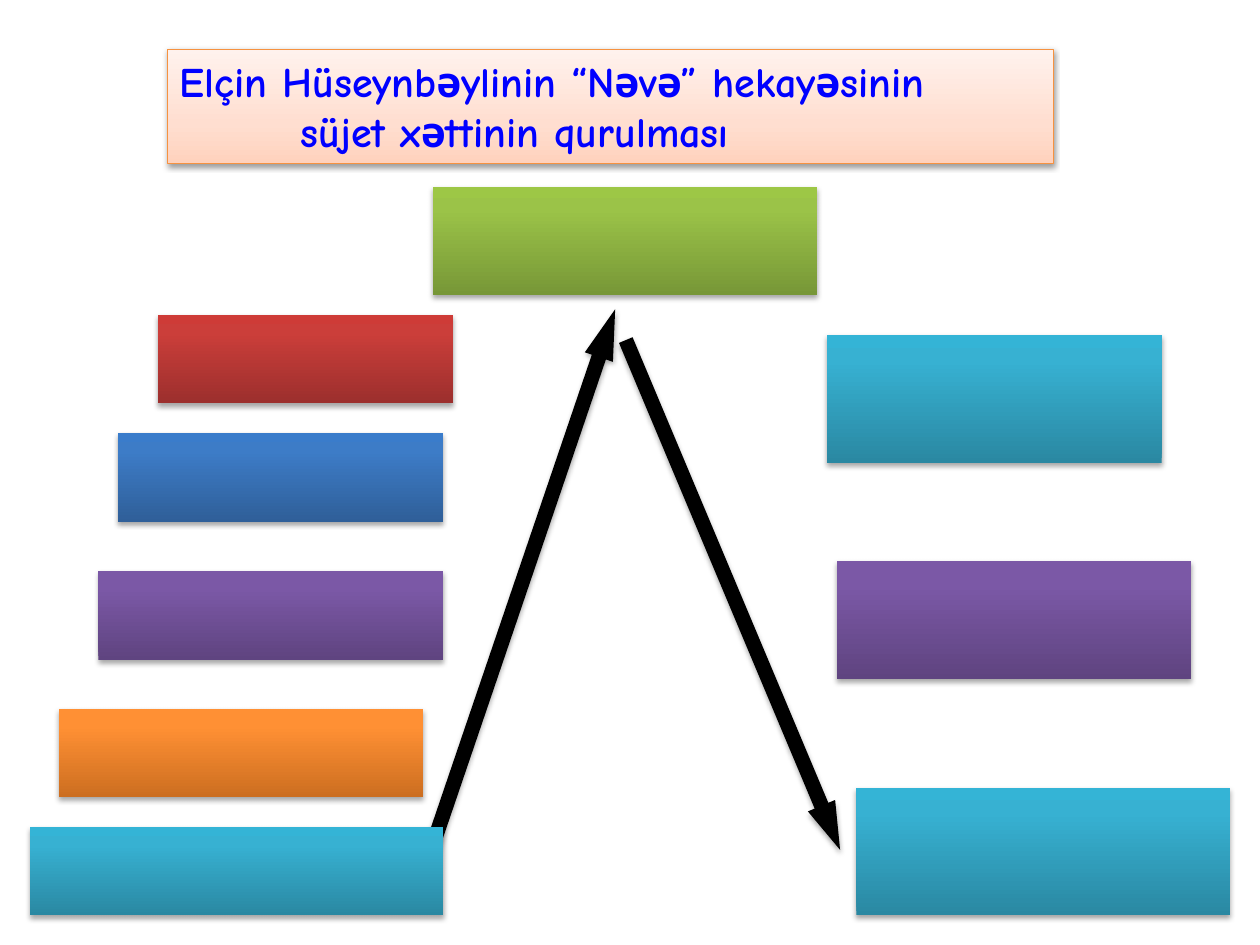
import copy
import pptx
import pptx.util
import pptx.dml.color
import pptx.enum.shapes
import pptx.enum.text
import pptx.oxml
import pptx.oxml.ns

Pt = pptx.util.Pt
KINDS = pptx.enum.shapes.MSO_SHAPE
COLORS = {
    "black": "000000",
    "text": "0000FF",
    "edge": "F69240",
    "peach": [(0, "FFD2BD"), (35, "FFDED0"), (100, "FFF2ED")],
    "red": [(0, "9C2F2D"), (80, "CB3E3A"), (100, "CE3B37")],
    "blue": [(0, "2F5F99"), (80, "3D7CC7"), (100, "3A7CCB")],
    "plum": [(0, "5F4480"), (80, "7B58A6"), (100, "7C57A8")],
    "teal": [(0, "2A88A2"), (80, "37B1D2"), (100, "34B4D6")],
    "gold": [(0, "CC6E20"), (80, "FF9034"), (100, "FF9136")],
    "green": [(0, "779737"), (80, "9BC348"), (100, "9DC746")],
}


def rgb(name):
    return pptx.dml.color.RGBColor.from_string(name)


class Deck:
    font = "Comic Neue"
    size = 24

    def __init__(self):
        self.file = pptx.Presentation()
        self.file.slide_width, self.file.slide_height = Pt(720), Pt(540)
        self.slide = self.file.slides.add_slide(self.file.slide_layouts[5])

    def shade(self, shape, name):
        shape.fill.gradient()
        shape.fill.gradient_angle = 90
        stop = shape._element.spPr.find(".//" + pptx.oxml.ns.qn("a:gs"))
        stop.addnext(copy.deepcopy(stop))
        for part, (place, tone) in zip(shape.fill.gradient_stops, COLORS[name]):
            part.position = place / 100
            part.color.rgb = rgb(tone)

    def shadow(self, shape, alpha=35, dist=1.8):
        shape._element.spPr.append(pptx.oxml.parse_xml(
            f'<a:effectLst {pptx.oxml.ns.nsdecls("a")}>'
            f'<a:outerShdw blurRad="{Pt(3.1)}" dist="{Pt(dist)}" dir="5400000" rotWithShape="0">'
            f'<a:srgbClr val="{COLORS["black"]}"><a:alpha val="{alpha * 1000}"/></a:srgbClr>'
            '</a:outerShdw></a:effectLst>'))

    def title(self, box, lines):
        shape = self.slide.shapes.title
        shape.left, shape.top, shape.width, shape.height = map(Pt, box)
        self.shade(shape, "peach")
        shape.line.color.rgb = rgb(COLORS["edge"])
        shape.line.width = Pt(0.75)
        self.shadow(shape, 38, 1.6)
        frame = shape.text_frame
        frame.word_wrap = True
        frame.auto_size = pptx.enum.text.MSO_AUTO_SIZE.SHAPE_TO_FIT_TEXT
        frame.vertical_anchor = pptx.enum.text.MSO_ANCHOR.TOP
        for row, (text, indent) in enumerate(lines):
            para = frame.add_paragraph() if row else frame.paragraphs[0]
            para.alignment = pptx.enum.text.PP_ALIGN.LEFT
            para._p.get_or_add_pPr().set("marL", str(Pt(indent)))
            run = para.add_run()
            run.text = text
            run.font.name = self.font
            run.font.size = Pt(self.size)
            run.font.bold = True
            run.font.color.rgb = rgb(COLORS["text"])

    def block(self, box, name):
        shape = self.slide.shapes.add_shape(KINDS.RECTANGLE, *map(Pt, box))
        self.shade(shape, name)
        shape.line.fill.background()
        self.shadow(shape)

    def arrow(self, kind, box, turn, head):
        shape = self.slide.shapes.add_shape(kind, *map(Pt, box))
        shape.rotation = turn
        shape.adjustments[0] = 0.5
        shape.adjustments[1] = head
        shape.fill.solid()
        shape.fill.fore_color.rgb = rgb(COLORS["black"])
        shape.line.fill.background()
        self.shadow(shape)


def main():
    deck = Deck()
    deck.title((95.6, 28.1, 506.3, 65.4), [
        ("Elçin Hüseynbəylinin “Nəvə” hekayəsinin", 0),
        ("süjet xəttinin qurulması", 69),
    ])
    deck.arrow(KINDS.UP_ARROW, (288, 167.6, 16.9, 342), 18.8, 1.71)

    for left, top, width, name in [
        (90, 180, 168.8, "red"),
        (67.5, 247.5, 185.6, "blue"),
        (56.3, 326.3, 196.9, "plum"),
        (33.8, 405, 208.1, "gold"),
        (16.9, 472.5, 236.3, "teal"),
    ]:
        deck.block((left, top, width, 50.6), name)

    deck.block((247.5, 106.9, 219.4, 61.9), "green")
    deck.block((472.5, 191.3, 191.3, 73.1), "teal")
    deck.block((478.1, 320.6, 202.5, 67.5), "plum")
    deck.block((489.4, 450, 213.8, 73.1), "teal")
    deck.arrow(KINDS.DOWN_ARROW, (410.4, 182, 16.9, 316), 337.2, 1.62)

    deck.file.save("out.pptx")


if __name__ == "__main__":
    main()
